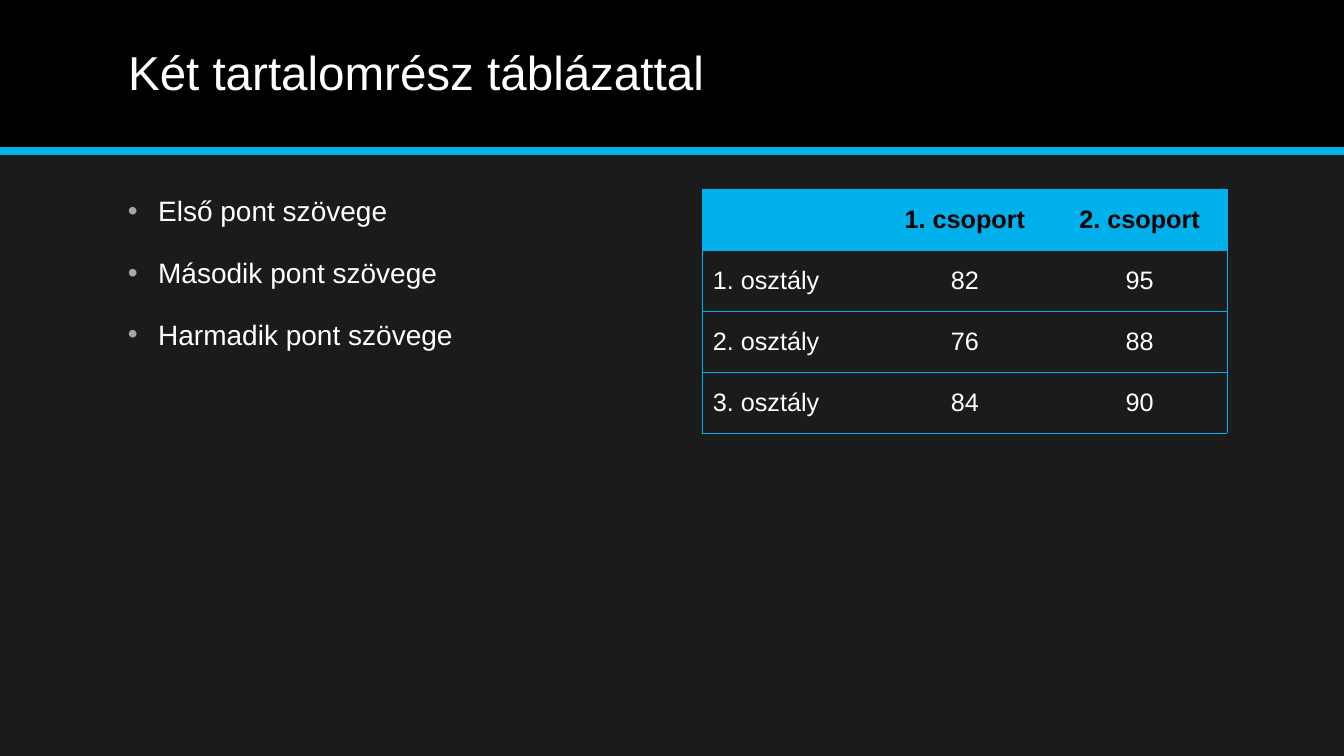
from lxml import etree
from pptx import Presentation, util as u
from pptx.dml.color import RGBColor
from pptx.enum import shapes, text
from pptx.oxml import ns

WIDE, HIGH = 13.33, 7.5
COLS = {"back": "1B1B1B", "band": "000000", "blue": "00B0EA",
        "text": "FFFFFF", "dark": "000000", "dot": "A6A6A6"}
FONT = "Arial"
LEFT, SPAN = 1.17, 11
HALF = 5.2
BAND = HIGH / 5
TOP = HIGH / 4

HEAD = "Két tartalomrész táblázattal"
POINTS = ["Első pont szövege", "Második pont szövege", "Harmadik pont szövege"]
ROWS = [["", "1. csoport", "2. csoport"],
        ["1. osztály", "82", "95"],
        ["2. osztály", "76", "88"],
        ["3. osztály", "84", "90"]]


def rgb(name):
    return RGBColor.from_string(COLS[name])


def inch(*nums):
    return [u.Inches(n) for n in nums]


def node(up, tag, **attrs):
    return etree.SubElement(up, ns.qn(tag), {k: str(v) for k, v in attrs.items()})


def write(par, words, size=20, tone="text", bold=False, align=text.PP_ALIGN.LEFT):
    par.alignment = align
    if words:
        run = par.add_run()
        run.text = words
        font = run.font
        font.name, font.size, font.bold = FONT, u.Pt(size), bold
        font.color.rgb = rgb(tone)


def add_head(slide, words, box):
    """Title over a black band with a blue rule along its lower edge."""
    x, y, w, h = box
    title = slide.shapes.title
    band = slide.shapes.add_shape(shapes.MSO_SHAPE.RECTANGLE, *inch(x, y, w, h))
    band.shadow.inherit = False
    band.fill.solid()
    band.fill.fore_color.rgb = rgb("band")
    band.line.fill.background()
    rule = slide.shapes.add_connector(
        shapes.MSO_CONNECTOR.STRAIGHT, *inch(x, y + h, x + w, y + h))
    rule.line.color.rgb = rgb("blue")
    rule.line.width = u.Pt(6)
    node(rule._element.spPr, "a:effectLst")
    for part in (band, rule):
        title.element.addprevious(part.element)

    title.left, title.top, title.width, title.height = inch(
        x + LEFT, y + 0.14, SPAN, h * 0.8)
    frame = title.text_frame
    frame.auto_size = text.MSO_AUTO_SIZE.NONE
    frame.vertical_anchor = text.MSO_ANCHOR.MIDDLE
    par = frame.paragraphs[0]
    par.line_spacing = 0.9
    write(par, words, size=34)


def add_list(slide, points, box):
    frame = slide.shapes.add_textbox(*inch(*box)).text_frame
    frame.word_wrap = True
    for i, words in enumerate(points):
        par = frame.add_paragraph() if i else frame.paragraphs[0]
        par.space_before = u.Pt(20)
        write(par, words)
        props = par._p.get_or_add_pPr()
        dent = u.Inches(0.3)
        props.set("marL", str(dent))
        props.set("indent", str(-dent))
        node(node(props, "a:buClr"), "a:srgbClr", val=COLS["dot"])
        node(props, "a:buFont", typeface=FONT)
        node(props, "a:buChar", char="•")


def edge(cell, sides):
    """Draw the named sides of a cell in blue and clear the others."""
    props = cell._tc.get_or_add_tcPr()
    for i, side in enumerate("LRTB"):
        line = etree.Element(ns.qn(f"a:ln{side}"), w=str(u.Pt(0.5)))
        if side in sides:
            node(node(line, "a:solidFill"), "a:srgbClr", val=COLS["blue"])
        else:
            node(line, "a:noFill")
        props.insert(i, line)


def add_grid(slide, rows, box):
    x, y, w, h = box
    high, wide = len(rows), len(rows[0])
    table = slide.shapes.add_table(high, wide, *inch(x, y, w, h)).table
    table.horz_banding = False
    for r, row in enumerate(rows):
        table.rows[r].height = u.Inches(h / high)
        for c, words in enumerate(row):
            cell = table.cell(r, c)
            cell.vertical_anchor = text.MSO_ANCHOR.MIDDLE
            if r == 0:
                cell.fill.solid()
                cell.fill.fore_color.rgb = rgb("blue")
            else:
                cell.fill.background()
            write(cell.text_frame.paragraphs[0], words, size=18,
                  tone="text" if r else "dark", bold=r == 0,
                  align=text.PP_ALIGN.CENTER if c else text.PP_ALIGN.LEFT)
            edge(cell, "TB" + "L" * (c == 0) + "R" * (c == wide - 1))


def main():
    deck = Presentation()
    deck.slide_width, deck.slide_height = inch(WIDE, HIGH)
    slide = deck.slides.add_slide(deck.slide_layouts[5])
    slide.background.fill.solid()
    slide.background.fill.fore_color.rgb = rgb("back")
    add_head(slide, HEAD, (0, 0, WIDE, BAND))
    add_list(slide, POINTS, (LEFT, TOP, HALF, HIGH * 0.65))
    add_grid(slide, ROWS, (LEFT + SPAN - HALF, TOP, HALF, 2.42))
    deck.save("out.pptx")


if __name__ == "__main__":
    main()
